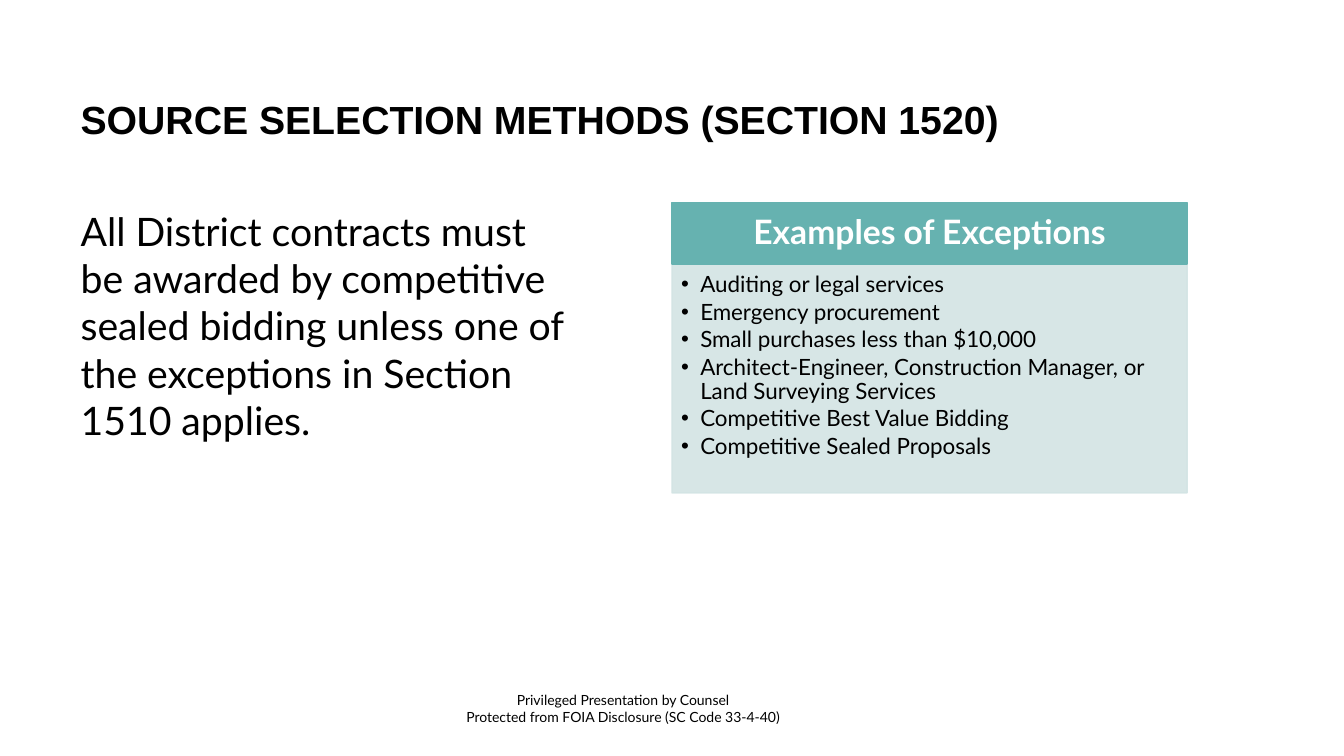
"""Build the source selection methods slide."""
from pptx import Presentation
from pptx.dml.color import RGBColor as RGB
from pptx.enum.shapes import MSO_SHAPE as Kind
from pptx.enum.text import MSO_ANCHOR as Anchor, MSO_AUTO_SIZE as Auto, PP_ALIGN as Align
from pptx.oxml.ns import qn
from pptx.util import Inches, Pt
from lxml.etree import SubElement as Sub

theme = {
    "head": "Arial", "text": "Lato",
    "black": RGB(0, 0, 0), "white": RGB(255, 255, 255),
    "teal": RGB(0x66, 0xB2, 0xB0), "pale": RGB(0xD3, 0xE4, 0xE4),
    "big": Pt(28), "band": Pt(24), "list": Pt(16), "foot": Pt(10),
}
items = [
    "Auditing or legal services",
    "Emergency procurement",
    "Small purchases less than $10,000",
    "Architect-Engineer, Construction Manager, or Land Surveying Services",
    "Competitive Best Value Bidding",
    "Competitive Sealed Proposals",
]


def place(shape, x, y, w, h):
    """Place a shape by percent shares of the slide."""
    spots = {"left": x * wide, "top": y * high, "width": w * wide, "height": h * high}
    for name, val in spots.items():
        setattr(shape, name, round(val / 100))


def write(shape, lines, frame, para, font, mark=None):
    """Fill a shape with formatted lines, bulleted when mark is given."""
    box = shape.text_frame
    box.text = "\n".join(lines)
    frame = {"word_wrap": True, "auto_size": Auto.NONE, **frame}
    for name, val in frame.items():
        setattr(box, name, val)
    for par in box.paragraphs:
        props = par._p.get_or_add_pPr()
        dent = Inches(0.19) if mark else 0
        props.set("marL", str(dent))
        props.set("indent", str(-dent))
        if mark:
            Sub(props, qn("a:buFont")).set("typeface", theme["head"])
            Sub(props, qn("a:buChar")).set("char", mark)
        else:
            Sub(props, qn("a:buNone"))
        for name, val in {"space_before": Pt(0), **para}.items():
            setattr(par, name, val)
        face, size, tint, bold = font
        par.font.color.rgb = theme[tint]
        looks = {"name": theme[face], "size": theme[size], "bold": bold}
        for name, val in looks.items():
            setattr(par.font, name, val)


deck = Presentation()
deck.slide_width, deck.slide_height = Inches(13.33), Inches(7.5)
wide, high = deck.slide_width, deck.slide_height
slide = deck.slides.add_slide(deck.slide_layouts[3])
title, rule, cases = slide.placeholders
band = slide.shapes.add_shape(Kind.RECTANGLE, 0, 0, 0, 0)
foot = slide.shapes.add_textbox(0, 0, 0, 0)

edge, mid, top, col = 5.25, 50, 26.8, 38.33
cap = 8.13
place(title, edge, 0.27, 85.37, 19.33)
place(rule, edge, top, 37.5, 50.93)
place(band, mid, top, col, cap)
place(cases, mid, top + cap, col, 30.27)
place(foot, 31.2, 91.07, 30.3, 5.33)

for shape, tint in ((cases, "pale"), (band, "teal")):
    shape.fill.solid()
    shape.fill.fore_color.rgb = theme[tint]
    shape.line.color.rgb = theme[tint]
    shape.line.width = Pt(1)
band.shadow.inherit = False
for tone in cases._element.spPr.iter(qn("a:srgbClr")):
    Sub(tone, qn("a:alpha")).set("val", "90000")

write(title, ["SOURCE SELECTION METHODS (SECTION 1520)"],
      {"vertical_anchor": Anchor.BOTTOM},
      {"alignment": Align.LEFT, "line_spacing": 0.9},
      ("head", "big", "black", True))
write(rule, ["All District contracts must be awarded by competitive sealed "
             "bidding unless one of the exceptions in Section 1510 applies."],
      {"vertical_anchor": Anchor.TOP}, {"space_after": Pt(6)},
      ("text", "big", "black", False))
write(band, ["Examples of Exceptions"],
      {"vertical_anchor": Anchor.MIDDLE},
      {"alignment": Align.CENTER, "line_spacing": 0.9},
      ("text", "band", "white", True))
write(cases, items,
      {"vertical_anchor": Anchor.TOP, "margin_left": Inches(0.09),
       "margin_top": Inches(0.09), "margin_right": Inches(0.12),
       "margin_bottom": Inches(0.14)},
      {"line_spacing": 0.9, "space_after": Pt(2.4)},
      ("text", "list", "black", False), "•")
write(foot, ["Privileged Presentation by Counsel",
             "Protected from FOIA Disclosure (SC Code 33-4-40)"],
      {"vertical_anchor": Anchor.MIDDLE}, {"alignment": Align.CENTER},
      ("text", "foot", "black", False))

deck.save("out.pptx")
